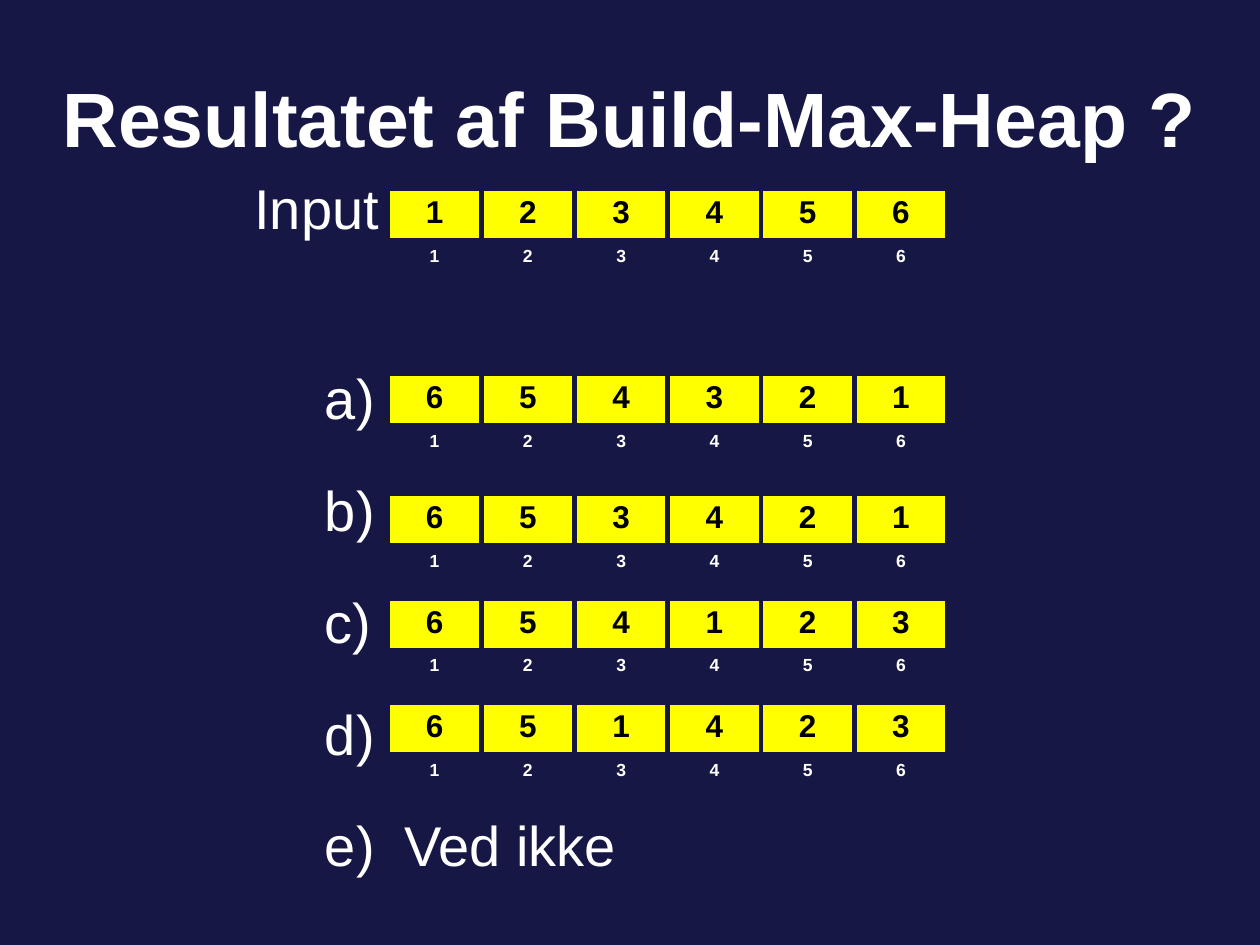
import pptx
import pptx.util
import pptx.dml.color
import pptx.enum.text
import pptx.oxml.ns
from lxml import etree

Cm, Pt = pptx.util.Cm, pptx.util.Pt
ALIGN = pptx.enum.text.PP_ALIGN
NAVY, WHITE, BLACK, YELLOW = "171745", "FFFFFF", "000000", "FFFF00"

INPUT = (3.81, "123456")
ANSWERS = [
    (7.54, "654321"),
    (9.96, "653421"),
    (12.07, "654123"),
    (14.17, "651423"),
]
LABELS = ["Input", "\ta)", "\tb)", "\tc)", "\td)", "\te)\tVed ikke"]
GAPS = [4, 70] + [25.5] * 4


def color(text):
    return pptx.dml.color.RGBColor.from_string(text)


def sub(parent, tag, **attrs):
    """Add an XML child such as a:ln to parent."""
    return etree.SubElement(parent, pptx.oxml.ns.qn(tag), **attrs)


class Deck:
    font = "Arial"
    left, col, row = 7.82, 1.88, 1.03

    def __init__(self):
        self.prs = pptx.Presentation()
        self.prs.slide_width, self.prs.slide_height = Cm(25.4), Cm(19.05)
        self.slide = self.prs.slides.add_slide(self.prs.slide_layouts[5])
        fill = self.slide.background.fill
        fill.solid()
        fill.fore_color.rgb = color(NAVY)

    def style(self, para, size, ink=WHITE, bold=False, align=ALIGN.CENTER):
        para.alignment = align
        font = para.font
        font.name, font.size, font.bold = self.font, Pt(size), bold
        font.color.rgb = color(ink)

    def title(self, text):
        box = self.slide.shapes.title
        box.left, box.top = Cm(0), Cm(0.76)
        box.width, box.height = Cm(25.4), Cm(3.18)
        frame = box.text_frame
        frame.text = text
        frame.vertical_anchor = pptx.enum.text.MSO_ANCHOR.MIDDLE
        self.style(frame.paragraphs[0], 44, bold=True)

    def labels(self, texts, gaps, stops):
        """Write one paragraph per label, each with its own space before."""
        box = self.slide.shapes.add_textbox(
            Cm(4.88), Cm(3.38), Cm(18.85), Cm(12.57))
        frame = box.text_frame
        frame.word_wrap = True
        for i, (text, gap) in enumerate(zip(texts, gaps)):
            para = frame.add_paragraph() if i else frame.paragraphs[0]
            para.text = text
            self.style(para, 32, align=ALIGN.LEFT)
            para.space_before = Pt(gap)
            props = para._p.get_or_add_pPr()
            tabs = etree.Element(pptx.oxml.ns.qn("a:tabLst"))
            for stop in stops:
                sub(tabs, "a:tab", pos=str(int(Cm(stop))), algn="l")
            props.find(pptx.oxml.ns.qn("a:defRPr")).addprevious(tabs)

    def border(self, cell):
        props = cell._tc.get_or_add_tcPr()
        for side in "LRTB":
            line = sub(props, "a:ln" + side, w=str(int(Pt(3))))
            sub(sub(line, "a:solidFill"), "a:srgbClr", val=NAVY)

    def cell(self, cell, text, size, ink, back=None):
        cell.text = text
        self.style(cell.text_frame.paragraphs[0], size, ink, bold=True)
        self.border(cell)
        if back:
            cell.fill.solid()
            cell.fill.fore_color.rgb = color(back)
        else:
            cell.fill.background()

    def array(self, top, keys):
        """Draw the keys of an array above their indices."""
        count = len(keys)
        table = self.slide.shapes.add_table(
            2, count, Cm(self.left), Cm(top),
            Cm(self.col * count), Cm(self.row * 2)).table
        table.first_row = table.horz_banding = False
        for row in table.rows:
            row.height = Cm(self.row)
        for i, key in enumerate(keys):
            table.columns[i].width = Cm(self.col)
            self.cell(table.cell(0, i), key, 18, BLACK, YELLOW)
            self.cell(table.cell(1, i), str(i + 1), 10, WHITE)


def main():
    deck = Deck()
    deck.title("Resultatet af Build-Max-Heap ?")
    deck.labels(LABELS, GAPS, stops=(1.42, 3.02))
    for top, keys in [INPUT] + ANSWERS:
        deck.array(top, keys)
    deck.prs.save("out.pptx")


if __name__ == "__main__":
    main()
